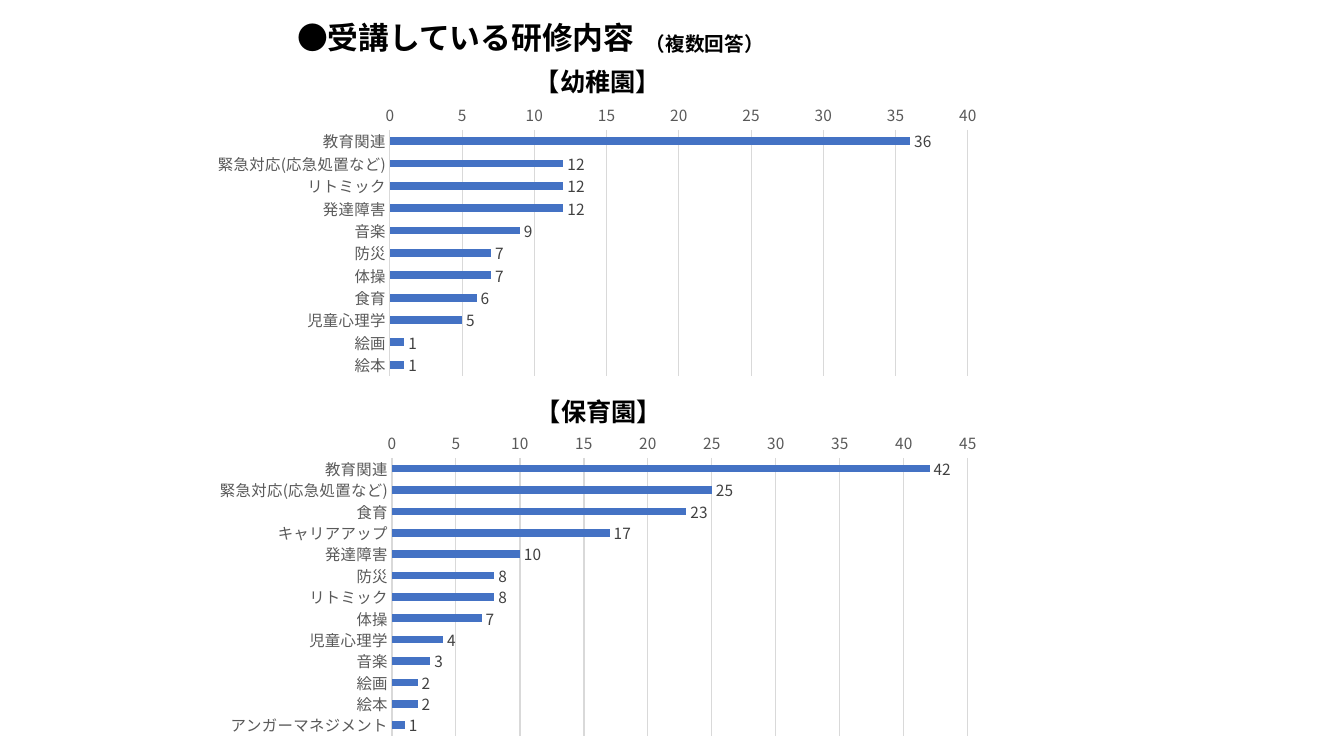
from lxml.etree import SubElement
from pptx import Presentation
from pptx.chart.data import CategoryChartData
from pptx.dml.color import RGBColor
from pptx.enum.chart import XL_CHART_TYPE, XL_LABEL_POSITION, XL_TICK_MARK
from pptx.enum.text import MSO_ANCHOR, PP_ALIGN
from pptx.oxml.ns import qn
from pptx.util import Emu, Pt

FONT = "Noto Sans CJK JP"
BLACK = RGBColor(0x00, 0x00, 0x00)
BAR_BLUE = RGBColor(0x44, 0x72, 0xC4)
AXIS_GREY = RGBColor(0x59, 0x59, 0x59)
LABEL_GREY = RGBColor(0x40, 0x40, 0x40)
GRID_GREY = RGBColor(0xD9, 0xD9, 0xD9)

# Boxes are left, top, width, height in px on the slide
TITLE = ("●受講している研修内容", (287, 14, 1094, 47), 22)
NOTE = ("（複数回答）", (636, 27, 228, 34), 14)
SECTIONS = [
    {
        "heading": ("【幼稚園】", (525, 61, 147, 40), 18),
        "chart_box": (194, 43, 864, 368),
        "plot_box": (390, 130, 578, 246),
        "maximum": 40,
        "answers": [
            ("教育関連", 36), ("緊急対応(応急処置など)", 12), ("リトミック", 12),
            ("発達障害", 12), ("音楽", 9), ("防災", 7), ("体操", 7), ("食育", 6),
            ("児童心理学", 5), ("絵画", 1), ("絵本", 1),
        ],
    },
    {
        "heading": ("【保育園】", (526, 391, 147, 40), 18),
        "chart_box": (196, 360, 862, 416),
        "plot_box": (392, 458, 576, 278),
        "maximum": 45,
        "answers": [
            ("教育関連", 42), ("緊急対応(応急処置など)", 25), ("食育", 23),
            ("キャリアアップ", 17), ("発達障害", 10), ("防災", 8), ("リトミック", 8),
            ("体操", 7), ("児童心理学", 4), ("音楽", 3), ("絵画", 2), ("絵本", 2),
            ("アンガーマネジメント", 1),
        ],
    },
]
EMU_PER_PX = 914400 / 100.8


def px(length):
    return Emu(round(length * EMU_PER_PX))


def style_font(font, size, color, bold=False):
    font.name = FONT
    font.size = Pt(size)
    font.color.rgb = color
    font.bold = bold


def use_font_for_japanese(element):
    """Repeat each Latin typeface as the East Asian one."""
    for latin in list(element.iter(qn("a:latin"))):
        east_asian = SubElement(latin.getparent(), qn("a:ea"))
        east_asian.set("typeface", FONT)
        latin.addnext(east_asian)


def fill_text(shape, content):
    text, box, size = content
    shape.left, shape.top, shape.width, shape.height = map(px, box)
    text_frame = shape.text_frame
    text_frame.text = text
    text_frame.word_wrap = True
    text_frame.vertical_anchor = MSO_ANCHOR.TOP
    paragraph = text_frame.paragraphs[0]
    paragraph.alignment = PP_ALIGN.LEFT
    style_font(paragraph.runs[0].font, size, BLACK, bold=True)
    use_font_for_japanese(shape.element)


def add_text(slide, content):
    fill_text(slide.shapes.add_textbox(*map(px, content[1])), content)


def set_plot_area(chart, chart_box, plot_box):
    """Fix the inner plot area, given in px, as fractions of the chart."""
    chart_left, chart_top, chart_width, chart_height = chart_box
    left, top, width, height = plot_box
    plot_area = chart.element.find(".//" + qn("c:plotArea"))
    for old_layout in plot_area.findall(qn("c:layout")):
        plot_area.remove(old_layout)
    layout = SubElement(plot_area, qn("c:layout"))
    plot_area.insert(0, layout)
    manual = SubElement(layout, qn("c:manualLayout"))
    settings = {
        "layoutTarget": "inner", "xMode": "edge", "yMode": "edge",
        "x": (left - chart_left) / chart_width,
        "y": (top - chart_top) / chart_height,
        "w": width / chart_width,
        "h": height / chart_height,
    }
    for name, value in settings.items():
        SubElement(manual, qn(f"c:{name}")).set("val", str(value))


def show_every_label(category_axis):
    """Keep all category labels, level, however tight the rows are."""
    axis = category_axis.element if hasattr(category_axis, "element") else category_axis._element
    axis.find(qn("c:txPr")).find(qn("a:bodyPr")).set("rot", "0")
    label_skip = SubElement(axis, qn("c:tickLblSkip"))
    label_skip.set("val", "1")
    axis.find(qn("c:noMultiLvlLbl")).addprevious(label_skip)


def style_line(line):
    line.color.rgb = GRID_GREY
    line.width = Pt(0.75)


def add_bar_chart(slide, section):
    categories, values = zip(*section["answers"])
    data = CategoryChartData()
    data.categories = categories
    data.add_series("回答数", values)
    chart = slide.shapes.add_chart(
        XL_CHART_TYPE.BAR_CLUSTERED, *map(px, section["chart_box"]), data).chart
    chart.has_legend = False
    chart.has_title = False
    style_font(chart.font, 10, BLACK)
    set_plot_area(chart, section["chart_box"], section["plot_box"])

    category_axis, value_axis = chart.category_axis, chart.value_axis
    for axis in (category_axis, value_axis):
        axis.major_tick_mark = axis.minor_tick_mark = XL_TICK_MARK.NONE
        style_font(axis.tick_labels.font, 11, AXIS_GREY)
    category_axis.reverse_order = True
    style_line(category_axis.format.line)
    show_every_label(category_axis)
    value_axis.minimum_scale, value_axis.maximum_scale = 0, section["maximum"]
    value_axis.major_unit = 5
    value_axis.format.line.fill.background()
    style_line(value_axis.major_gridlines.format.line)

    plot = chart.plots[0]
    plot.gap_width = 182
    plot.vary_by_categories = False
    series = plot.series[0]
    series.format.fill.solid()
    series.format.fill.fore_color.rgb = BAR_BLUE
    labels = series.data_labels
    labels.show_value = True
    labels.position = XL_LABEL_POSITION.OUTSIDE_END
    style_font(labels.font, 11, LABEL_GREY)
    use_font_for_japanese(chart.element)


def main():
    presentation = Presentation()
    presentation.slide_width, presentation.slide_height = px(1344), px(756)
    slide = presentation.slides.add_slide(presentation.slide_layouts[5])
    fill_text(slide.shapes.title, TITLE)
    for section in SECTIONS:
        add_text(slide, section["heading"])
        add_bar_chart(slide, section)
    add_text(slide, NOTE)
    presentation.save("out.pptx")


if __name__ == "__main__":
    main()
